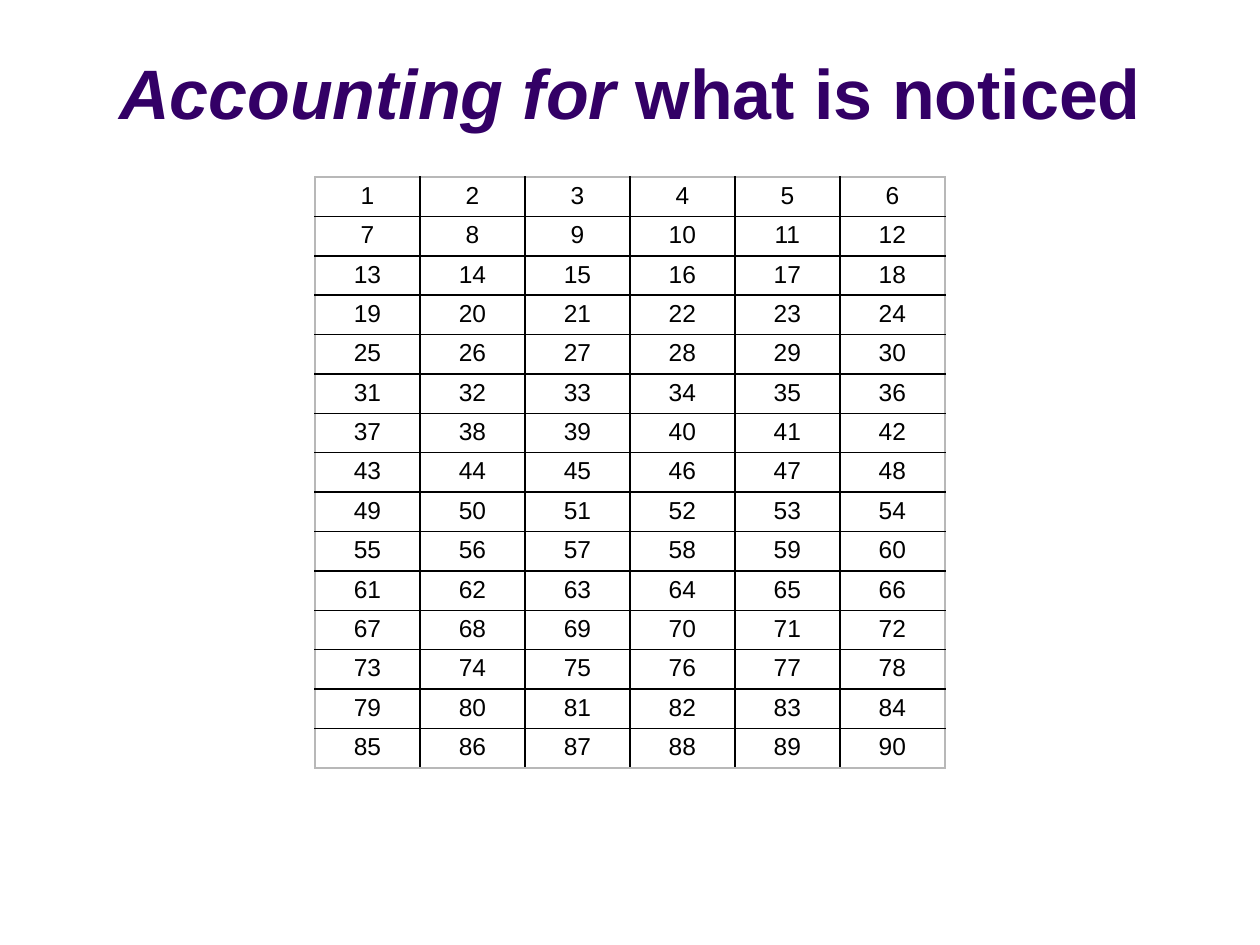
"""Build a slide with a titled grid of the numbers 1 to 90."""
from lxml.etree import SubElement
from pptx import Presentation
from pptx.dml.color import RGBColor
from pptx.enum.text import MSO_ANCHOR as Anchor, PP_ALIGN as Align
from pptx.oxml.ns import qn
from pptx.util import Emu, Pt

PURPLE = RGBColor(0x33, 0x00, 0x66)
BLACK = RGBColor(0x00, 0x00, 0x00)
GREY = RGBColor(0xB8, 0xB8, 0xB8)
FONT = "Arial"
ROWS, COLUMNS = 15, 6


def px(length):
    return Emu(round(length * 914400 / 126))


def add_border(cell, side, color):
    line = SubElement(cell._tc.get_or_add_tcPr(), qn(f"a:ln{side}"), w=str(Pt(1)))
    fill = SubElement(line, qn("a:solidFill"))
    SubElement(fill, qn("a:srgbClr"), val=str(color))


presentation = Presentation()
presentation.slide_width, presentation.slide_height = px(1260), px(945)
slide = presentation.slides.add_slide(presentation.slide_layouts[6])

title = slide.shapes.add_textbox(px(63), px(38), px(1134), px(107))
title.text_frame.word_wrap = True
title.text_frame.vertical_anchor = Anchor.MIDDLE
paragraph = title.text_frame.paragraphs[0]
paragraph.alignment = Align.CENTER
paragraph.font.name, paragraph.font.size = FONT, Pt(40)
paragraph.font.bold = True
paragraph.font.color.rgb = PURPLE
for text, italic in (("Accounting for", True), (" what is noticed", False)):
    run = paragraph.add_run()
    run.text = text
    run.font.italic = italic

frame = slide.shapes.add_table(ROWS, COLUMNS, px(315), px(177), px(630), px(591))
table = frame.table
table.first_row = table.horz_banding = False
for row in range(ROWS):
    for column in range(COLUMNS):
        cell = table.cell(row, column)
        cell.margin_left = cell.margin_right = px(9)
        cell.margin_top = cell.margin_bottom = px(5)
        cell.text = str(row * COLUMNS + column + 1)
        paragraph = cell.text_frame.paragraphs[0]
        paragraph.alignment = Align.CENTER
        paragraph.font.name, paragraph.font.size = FONT, Pt(14)
        paragraph.font.color.rgb = BLACK
        outer_sides = {
            "L": column == 0,
            "R": column == COLUMNS - 1,
            "T": row == 0,
            "B": row == ROWS - 1,
        }
        for side, is_outer in outer_sides.items():
            add_border(cell, side, GREY if is_outer else BLACK)
        cell.fill.background()

presentation.save("out.pptx")
